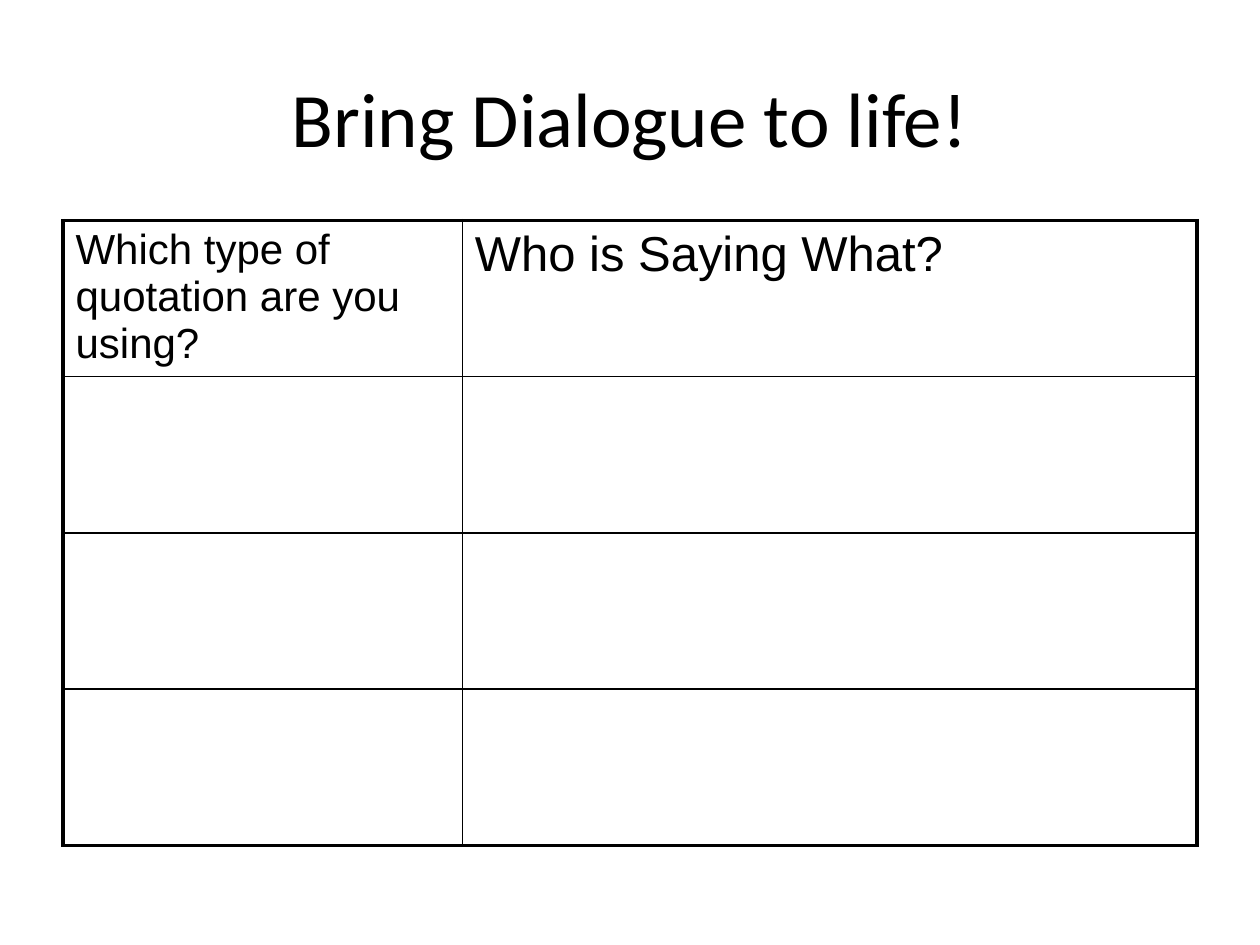
from pptx import Presentation
from pptx.dml.color import RGBColor
from pptx.enum.text import MSO_ANCHOR, PP_ALIGN
from pptx.oxml.ns import qn
from pptx.util import Inches, Pt
from lxml.etree import SubElement

BLACK = RGBColor(0, 0, 0)
THICK, THIN = Pt(2.25), Pt(1)
WIDTHS = (3.17, 5.83)
ROWS, HEIGHT = 4, 1.24
HEADS = (("Which type of quotation are you using?", 24),
         ("Who is Saying What?", 28))


def style(para, face, size):
    para.font.name = face
    para.font.size = Pt(size)
    para.font.bold = False
    para.font.color.rgb = BLACK


def add_title(slide, text):
    title = slide.shapes.title
    title.left, title.top = Inches(0.5), Inches(0.3)
    title.width, title.height = Inches(9), Inches(1.25)
    frame = title.text_frame
    frame.text = text
    frame.vertical_anchor = MSO_ANCHOR.MIDDLE
    para = frame.paragraphs[0]
    para.alignment = PP_ALIGN.CENTER
    style(para, "Calibri", 44)


def set_edge(cell, side, width):
    props = cell._tc.get_or_add_tcPr()
    line = SubElement(props, qn(f"a:ln{side}"), w=str(width))
    fill = SubElement(line, qn("a:solidFill"))
    SubElement(fill, qn("a:srgbClr"), val=str(BLACK))


def add_grid(slide):
    cols = len(WIDTHS)
    frame = slide.shapes.add_table(
        ROWS, cols, Inches(0.5), Inches(1.75),
        Inches(sum(WIDTHS)), Inches(ROWS * HEIGHT))
    table = frame.table
    table.first_row = table.horz_banding = False
    for col, width in zip(table.columns, WIDTHS):
        col.width = Inches(width)
    for r, row in enumerate(table.rows):
        row.height = Inches(HEIGHT)
        for c, cell in enumerate(row.cells):
            # Thick lines around the outside, thin ones inside
            outer = {"L": c == 0, "R": c == cols - 1,
                     "T": r == 0, "B": r == ROWS - 1}
            for side, edge in outer.items():
                set_edge(cell, side, THICK if edge else THIN)
            cell.fill.background()
            text, size = HEADS[c] if r == 0 else ("", 28)
            cell.text = text
            style(cell.text_frame.paragraphs[0], "Arial", size)


def main():
    deck = Presentation()
    deck.slide_width, deck.slide_height = Inches(10), Inches(7.5)
    slide = deck.slides.add_slide(deck.slide_layouts[5])
    add_title(slide, "Bring Dialogue to life!")
    add_grid(slide)
    deck.save("out.pptx")


if __name__ == "__main__":
    main()
